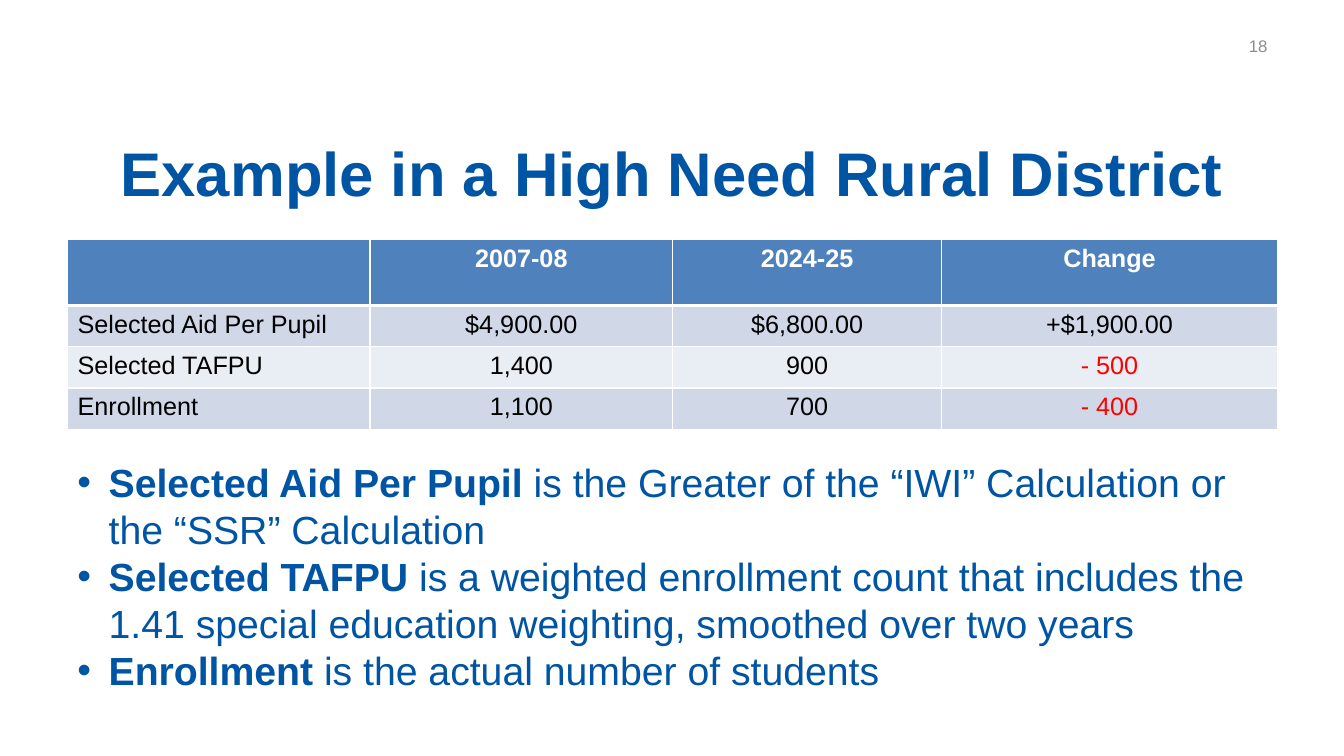
from lxml import etree
from pptx import Presentation
from pptx.dml.color import RGBColor
from pptx.enum.text import MSO_ANCHOR, PP_ALIGN
from pptx.oxml.ns import qn
from pptx.util import Inches, Pt

LEFT, CENTER, RIGHT = PP_ALIGN.LEFT, PP_ALIGN.CENTER, PP_ALIGN.RIGHT
TOP, MIDDLE = MSO_ANCHOR.TOP, MSO_ANCHOR.MIDDLE
FONT = "Arial"
COLORS = {
    "blue": "0054A4", "header": "4F81BD", "band_dark": "D0D8E8",
    "band_light": "E9EDF4", "white": "FFFFFF", "black": "000000",
    "red": "FF0000", "gray": "8C8C8C",
}
MARGIN, CONTENT_WIDTH = 0.67, 12

COLUMN_WIDTHS = [3, 3, 2.67, 3.33]
HEADER_HEIGHT, ROW_HEIGHT = 0.65, 0.41
AID_ROWS = [
    ["", "2007-08", "2024-25", "Change"],
    ["Selected Aid Per Pupil", "$4,900.00", "$6,800.00", "+$1,900.00"],
    ["Selected TAFPU", "1,400", "900", "- 500"],
    ["Enrollment", "1,100", "700", "- 400"],
]
DEFINITIONS = [
    ("Selected Aid Per Pupil ",
     "is the Greater of the “IWI” Calculation or the “SSR” Calculation"),
    ("Selected TAFPU ",
     "is a weighted enrollment count that includes the 1.41 special education "
     "weighting, smoothed over two years"),
    ("Enrollment", " is the actual number of students"),
]


def rgb(color):
    return RGBColor.from_string(COLORS[color])


def add_run(paragraph, text, size, color, bold=False):
    run = paragraph.add_run()
    run.text = text
    run.font.name = FONT
    run.font.size = Pt(size)
    run.font.bold = bold
    run.font.color.rgb = rgb(color)


def add_text_frame(slide, box, anchor):
    frame = slide.shapes.add_textbox(*map(Inches, box)).text_frame
    frame.word_wrap = True
    frame.vertical_anchor = anchor
    return frame


def add_line_of_text(slide, box, text, size, color, align, bold=False):
    paragraph = add_text_frame(slide, box, MIDDLE).paragraphs[0]
    paragraph.alignment = align
    add_run(paragraph, text, size, color, bold)


def set_borders(cell, widths):
    """Draw white cell edges; widths maps L, R, T and B to points."""
    properties = cell._tc.get_or_add_tcPr()
    for side, width in widths.items():
        line = etree.SubElement(properties, qn(f"a:ln{side}"), w=str(Pt(width)))
        fill = etree.SubElement(line, qn("a:solidFill"))
        etree.SubElement(fill, qn("a:srgbClr"), val=COLORS["white"])


def style_cell(cell, text, row, column):
    is_header = row == 0
    set_borders(cell, {"L": 1, "R": 1, "T": 3 if row == 1 else 1,
                       "B": 3 if is_header else 1})
    cell.fill.solid()
    band = "band_dark" if row % 2 else "band_light"
    cell.fill.fore_color.rgb = rgb("header" if is_header else band)
    if text:
        paragraph = cell.text_frame.paragraphs[0]
        paragraph.alignment = CENTER if is_header or column else LEFT
        body_color = "red" if text.startswith("-") else "black"
        add_run(paragraph, text, 18, "white" if is_header else body_color, is_header)


def add_aid_table(slide, left, top):
    heights = [HEADER_HEIGHT] + [ROW_HEIGHT] * (len(AID_ROWS) - 1)
    table = slide.shapes.add_table(
        len(AID_ROWS), len(COLUMN_WIDTHS), Inches(left), Inches(top),
        Inches(sum(COLUMN_WIDTHS)), Inches(sum(heights))).table
    for column, width in zip(table.columns, COLUMN_WIDTHS):
        column.width = Inches(width)
    for row, (height, texts) in enumerate(zip(heights, AID_ROWS)):
        table.rows[row].height = Inches(height)
        for column, text in enumerate(texts):
            style_cell(table.cell(row, column), text, row, column)


def add_definitions(slide, box):
    frame = add_text_frame(slide, box, TOP)
    for index, (term, meaning) in enumerate(DEFINITIONS):
        paragraph = frame.add_paragraph() if index else frame.paragraphs[0]
        properties = paragraph._p.get_or_add_pPr()
        indent = Inches(0.31)
        properties.set("marL", str(indent))
        properties.set("indent", str(-indent))
        etree.SubElement(properties, qn("a:buFont"), typeface=FONT)
        etree.SubElement(properties, qn("a:buChar"), char="•")
        add_run(paragraph, term, 28, "blue", bold=True)
        add_run(paragraph, meaning, 28, "blue")


def main():
    deck = Presentation()
    deck.slide_width, deck.slide_height = Inches(13.33), Inches(7.5)
    slide = deck.slides.add_slide(deck.slide_layouts[6])
    add_line_of_text(slide, (MARGIN, 1.08, CONTENT_WIDTH, 1.25),
                     "Example in a High Need Rural District", 44, "blue", CENTER, bold=True)
    add_aid_table(slide, MARGIN, 2.38)
    add_line_of_text(slide, (9.67, 0.25, 3, 0.4), "18", 12, "gray", RIGHT)
    add_definitions(slide, (MARGIN, 4.5, CONTENT_WIDTH, 2.46))
    deck.save("out.pptx")


if __name__ == "__main__":
    main()
